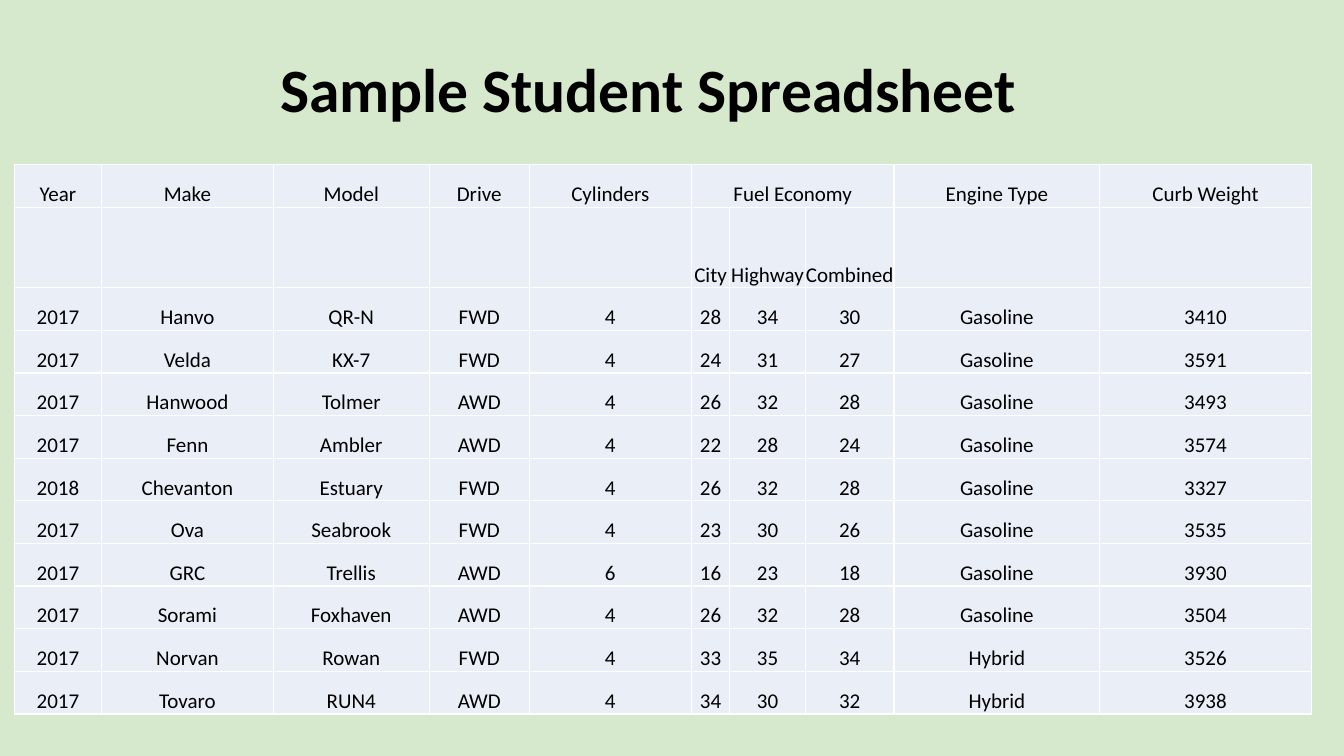
from dataclasses import dataclass

from lxml import etree
from pptx import Presentation
from pptx.dml.color import RGBColor
from pptx.enum import text
from pptx.oxml import ns
from pptx.util import Pt


@dataclass(frozen=True)
class Theme:
    font: str = "Calibri"
    title_size: float = 44
    cell_size: float = 15
    ink: str = "000000"
    backdrop: str = "C5E0B4"
    backdrop_alpha: int = 68000
    cell_fill: str = "EAEFF7"
    border: str = "FFFFFF"
    border_width: float = 1


THEME = Theme()

TITLE = "Sample Student Spreadsheet"
COLUMN_WIDTHS = [62.6, 122.4, 111.6, 71.3, 115.9, 27.4, 54, 63.4, 146.9, 151.2]
ROW_HEIGHT, SUBHEAD_HEIGHT = 30.45, 57.4
FUEL_FIRST, FUEL_LAST = 5, 7

ROWS = [
    ["Year", "Make", "Model", "Drive", "Cylinders", "Fuel Economy", "", "",
     "Engine Type", "Curb Weight"],
    ["", "", "", "", "", "City", "Highway", "Combined", "", ""],
    ["2017", "Hanvo", "QR-N", "FWD", "4", "28", "34", "30", "Gasoline", "3410"],
    ["2017", "Velda", "KX-7", "FWD", "4", "24", "31", "27", "Gasoline", "3591"],
    ["2017", "Hanwood", "Tolmer", "AWD", "4", "26", "32", "28", "Gasoline", "3493"],
    ["2017", "Fenn", "Ambler", "AWD", "4", "22", "28", "24", "Gasoline", "3574"],
    ["2018", "Chevanton", "Estuary", "FWD", "4", "26", "32", "28", "Gasoline", "3327"],
    ["2017", "Ova", "Seabrook", "FWD", "4", "23", "30", "26", "Gasoline", "3535"],
    ["2017", "GRC", "Trellis", "AWD", "6", "16", "23", "18", "Gasoline", "3930"],
    ["2017", "Sorami", "Foxhaven", "AWD", "4", "26", "32", "28", "Gasoline", "3504"],
    ["2017", "Norvan", "Rowan", "FWD", "4", "33", "35", "34", "Hybrid", "3526"],
    ["2017", "Tovaro", "RUN4", "AWD", "4", "34", "30", "32", "Hybrid", "3938"],
]


def rgb(value):
    return RGBColor.from_string(value)


def style_paragraph(p, size, bold=False):
    """Centre a paragraph and give it and its runs the same font."""
    p.alignment = text.PP_ALIGN.CENTER
    for font in [p.font, *(r.font for r in p.runs)]:
        font.name = THEME.font
        font.size = Pt(size)
        font.bold = bold
        font.color.rgb = rgb(THEME.ink)


def paint_background(slide):
    fill = slide.background.fill
    fill.solid()
    fill.fore_color.rgb = rgb(THEME.backdrop)
    color = slide.element.xpath("./p:cSld/p:bg//a:srgbClr")[0]
    alpha = etree.SubElement(color, ns.qn("a:alpha"))
    alpha.set("val", str(THEME.backdrop_alpha))


def set_title(slide):
    sp = slide.shapes.title
    sp.left, sp.top, sp.width, sp.height = Pt(60), Pt(13.8), Pt(828), Pt(104.4)
    tf = sp.text_frame
    tf.text = TITLE
    tf.word_wrap = True
    tf.auto_size = text.MSO_AUTO_SIZE.NONE
    tf.vertical_anchor = text.MSO_ANCHOR.MIDDLE
    # The wider right inset sets the heading slightly left of centre
    tf.margin_right = Pt(28.6)
    p = tf.paragraphs[0]
    p.line_spacing = 0.9
    style_paragraph(p, THEME.title_size, bold=True)


def add_borders(cell):
    tc_pr = cell._tc.get_or_add_tcPr()
    for i, side in enumerate("LRTB"):
        ln = etree.Element(ns.qn(f"a:ln{side}"), w=str(Pt(THEME.border_width)))
        fill = etree.SubElement(ln, ns.qn("a:solidFill"))
        etree.SubElement(fill, ns.qn("a:srgbClr"), val=THEME.border)
        tc_pr.insert(i, ln)


def format_cell(cell, value):
    cell.text = value
    cell.margin_left = cell.margin_right = cell.margin_top = Pt(0.5)
    cell.margin_bottom = 0
    cell.vertical_anchor = text.MSO_ANCHOR.BOTTOM
    cell.fill.solid()
    cell.fill.fore_color.rgb = rgb(THEME.cell_fill)
    add_borders(cell)
    style_paragraph(cell.text_frame.paragraphs[0], THEME.cell_size)


def add_car_table(slide):
    heights = [ROW_HEIGHT] * len(ROWS)
    heights[1] = SUBHEAD_HEIGHT
    table = slide.shapes.add_table(
        len(ROWS), len(COLUMN_WIDTHS), Pt(10.1), Pt(117.7),
        Pt(sum(COLUMN_WIDTHS)), Pt(sum(heights))).table
    table.first_row = table.horz_banding = False
    for column, width in zip(table.columns, COLUMN_WIDTHS):
        column.width = Pt(width)
    for row, height, values in zip(table.rows, heights, ROWS):
        row.height = Pt(height)
        for cell, value in zip(row.cells, values):
            format_cell(cell, value)
    # One heading spans the three fuel columns
    table.cell(0, FUEL_FIRST).merge(table.cell(0, FUEL_LAST))


def main():
    prs = Presentation()
    prs.slide_width, prs.slide_height = Pt(960), Pt(540)
    slide = prs.slides.add_slide(prs.slide_layouts.get_by_name("Title Only"))
    paint_background(slide)
    set_title(slide)
    add_car_table(slide)
    prs.save("out.pptx")


if __name__ == "__main__":
    main()
